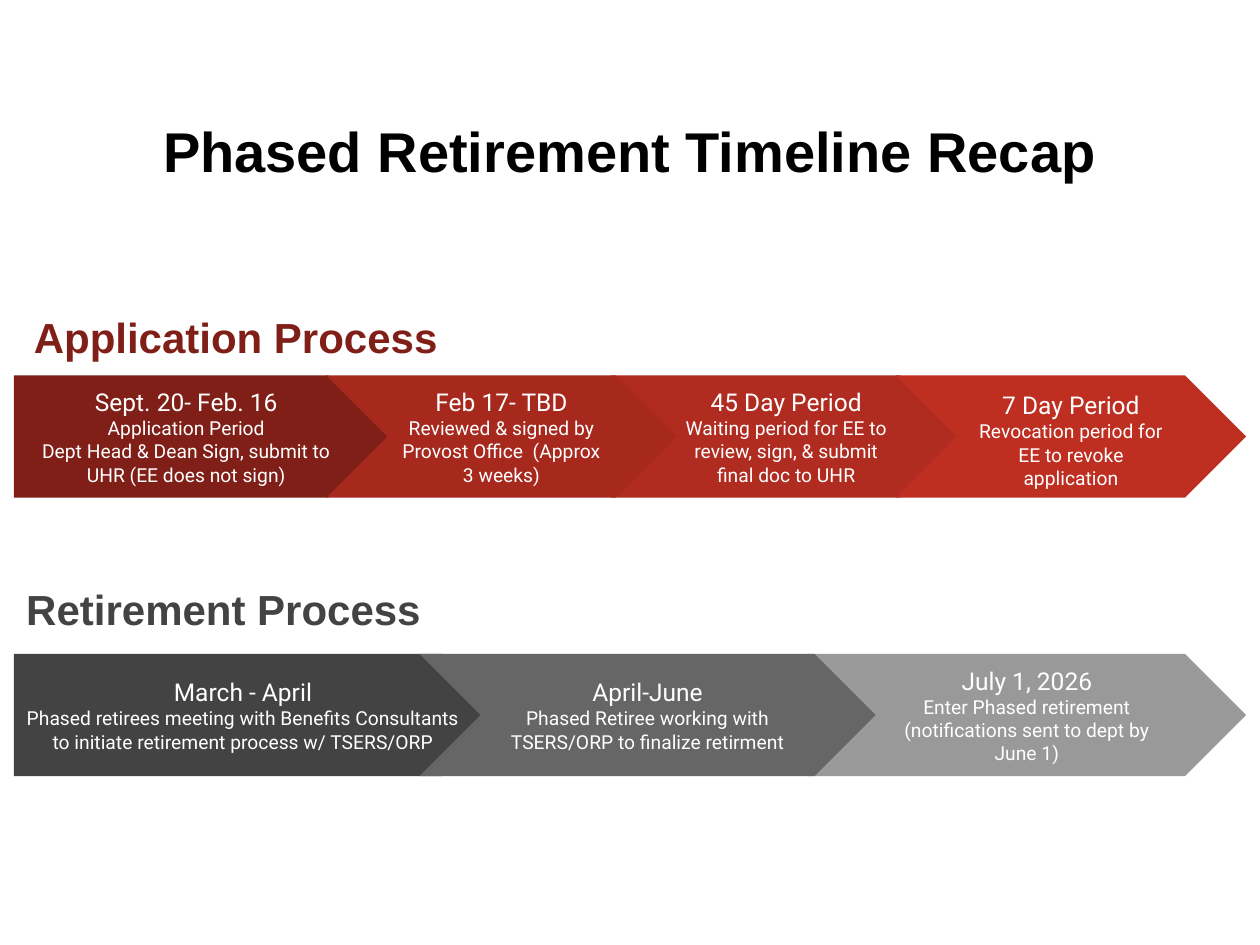
from dataclasses import dataclass

from pptx import Presentation
from pptx import util as u
from pptx.dml.color import RGBColor
from pptx.enum import shapes, text


@dataclass(frozen=True)
class Theme:
    heading_font: str = "Arial"
    step_font: str = "Roboto"
    title_size: int = 32
    heading_size: int = 24
    date_size: int = 14
    detail_size: int = 11
    inset: float = 0.1
    black: str = "000000"
    white: str = "FFFFFF"
    reds: tuple = ("801F17", "A7291E", "B02B20", "BE2F22")
    greys: tuple = ("434343", "666666", "999999")


class TimelineSlide:
    def __init__(self, slide, theme):
        self.slide = slide
        self.theme = theme

    def prepare_frame(self, frame, anchor):
        frame.word_wrap = True
        frame.auto_size = text.MSO_AUTO_SIZE.NONE
        frame.vertical_anchor = anchor
        frame.margin_left = frame.margin_right = u.Inches(self.theme.inset)
        frame.margin_top = frame.margin_bottom = u.Inches(self.theme.inset)

    def style(self, paragraph, font, size, color, align, bold=False):
        paragraph.alignment = align
        for run in paragraph.runs:
            run.font.name = font
            run.font.size = u.Pt(size)
            run.font.bold = bold
            run.font.color.rgb = RGBColor.from_string(color)

    def heading(self, wording, box, size, color,
                align=text.PP_ALIGN.LEFT, anchor=text.MSO_ANCHOR.TOP):
        frame = self.slide.shapes.add_textbox(*map(u.Inches, box)).text_frame
        self.prepare_frame(frame, anchor)
        frame.text = wording
        self.style(frame.paragraphs[0], self.theme.heading_font, size, color, align, bold=True)

    def step(self, outline, box, color, lines, drop=0):
        arrow = self.slide.shapes.add_shape(outline, *map(u.Inches, box))
        arrow.shadow.inherit = False
        arrow.adjustments[0] = 0.5
        arrow.fill.solid()
        arrow.fill.fore_color.rgb = RGBColor.from_string(color)
        arrow.line.fill.background()
        frame = arrow.text_frame
        self.prepare_frame(frame, text.MSO_ANCHOR.MIDDLE)
        frame.margin_top = u.Inches(self.theme.inset + drop)
        frame.text = "\n".join(lines)
        for index, paragraph in enumerate(frame.paragraphs):
            size = self.theme.detail_size if index else self.theme.date_size
            self.style(paragraph, self.theme.step_font, size, self.theme.white,
                       text.PP_ALIGN.CENTER)

    def process(self, top, steps):
        for left, width, color, lines, drop in steps:
            first = left == ROW_LEFT
            outline = shapes.MSO_SHAPE.PENTAGON if first else shapes.MSO_SHAPE.CHEVRON
            self.step(outline, (left, top, width, ROW_HEIGHT), color, lines, drop)


ROW_LEFT, ROW_HEIGHT = 0.11, 0.97


def main():
    theme = Theme()
    deck = Presentation()
    deck.slide_width, deck.slide_height = u.Inches(10), u.Inches(7.5)
    recap = TimelineSlide(deck.slides.add_slide(deck.slide_layouts[6]), theme)

    recap.heading("Phased Retirement Timeline Recap", (0.5, 0.61, 9, 1.17), theme.title_size,
                  theme.black, text.PP_ALIGN.CENTER, text.MSO_ANCHOR.MIDDLE)

    application_steps = [
        (ROW_LEFT, 2.98, theme.reds[0],
         ["Sept. 20- Feb. 16", "Application Period",
          "Dept Head & Dean Sign, submit to UHR (EE does not sign)"], 0),
        (4.85, 2.78, theme.reds[2],
         ["45 Day Period", "Waiting period for EE to review, sign, & submit final doc to UHR"], 0),
        (7.11, 2.78, theme.reds[3],
         ["7 Day Period", "Revocation period for EE to revoke application"], 0.05),
        (2.59, 2.78, theme.reds[1],
         ["Feb 17- TBD", "Reviewed & signed by Provost Office  (Approx 3 weeks)"], 0),
    ]
    recap.process(2.98, application_steps)
    recap.heading("Application Process", (0.17, 2.37, 6.38, 0.56),
                  theme.heading_size, theme.reds[0])

    retirement_steps = [
        (ROW_LEFT, 3.88, theme.greys[0],
         ["March - April", "Phased retirees meeting with Benefits Consultants "
          "to initiate retirement process w/ TSERS/ORP"], 0),
        (6.41, 3.48, theme.greys[2],
         ["July 1, 2026", "Enter Phased retirement (notifications sent to dept by June 1)"], 0),
        (3.33, 3.62, theme.greys[1],
         ["April-June", "Phased Retiree working with TSERS/ORP to finalize retirment"], 0),
    ]
    recap.process(5.19, retirement_steps)
    recap.heading("Retirement Process", (0.11, 4.53, 6.11, 0.56),
                  theme.heading_size, theme.greys[0])

    deck.save("out.pptx")


if __name__ == "__main__":
    main()
